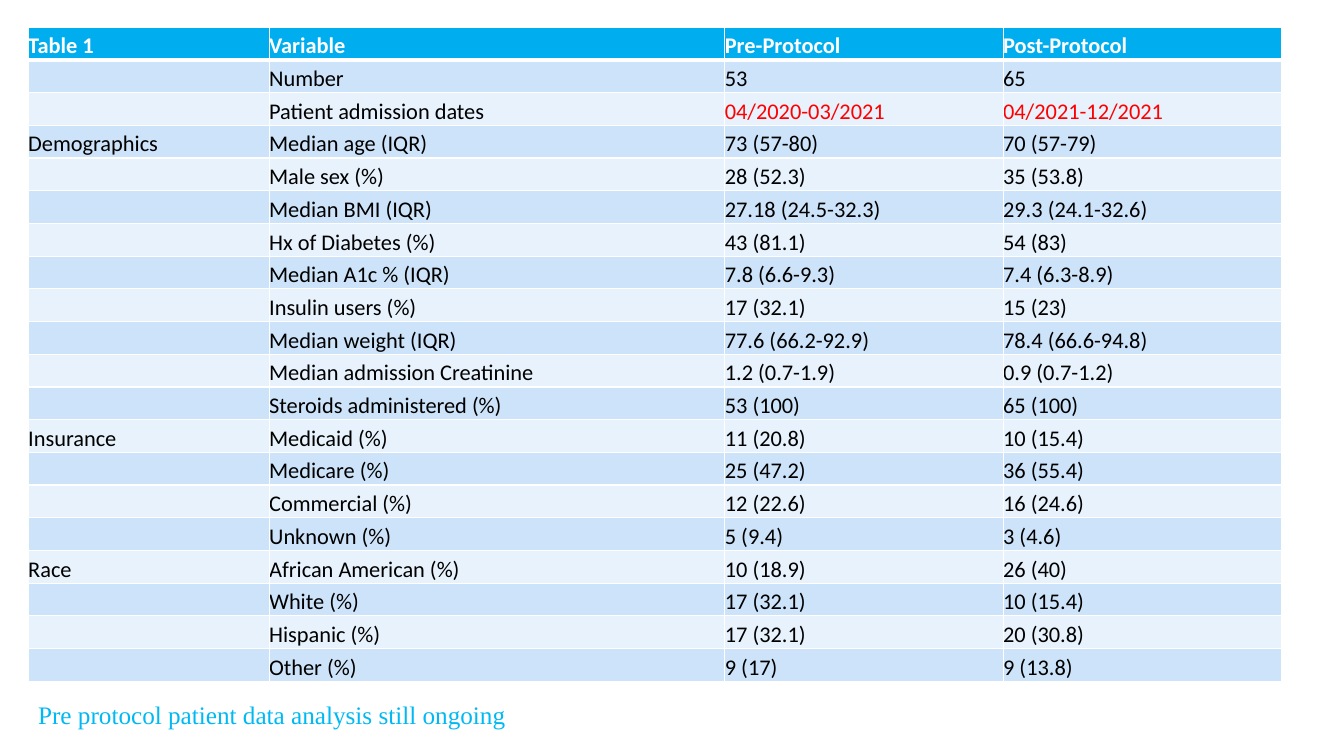
from lxml.etree import SubElement as Sub
from pptx import Presentation
from pptx.dml.color import RGBColor as RGB
from pptx.enum.text import MSO_ANCHOR as Anchor
from pptx.oxml.ns import qn
from pptx.util import Inches, Pt

BLUE = RGB(0x00, 0xAE, 0xEF)
DARK = RGB(0xCC, 0xE3, 0xF9)
PALE = RGB(0xE7, 0xF2, 0xFC)
WHITE = RGB(0xFF, 0xFF, 0xFF)
BLACK = RGB(0x00, 0x00, 0x00)
RED = RGB(0xFF, 0x00, 0x00)
CYAN = RGB(0x00, 0xB9, 0xF2)

WIDTHS = (2.39, 4.52, 2.76, 2.76)
DATES = "Patient admission dates"
ROWS = [
    ("Table 1", "Variable", "Pre-Protocol", "Post-Protocol"),
    ("", "Number", "53", "65"),
    ("", DATES, "04/2020-03/2021", "04/2021-12/2021"),
    ("Demographics", "Median age (IQR)", "73 (57-80)", "70 (57-79)"),
    ("", "Male sex (%)", "28 (52.3)", "35 (53.8)"),
    ("", "Median BMI (IQR)", "27.18 (24.5-32.3)", "29.3 (24.1-32.6)"),
    ("", "Hx of Diabetes (%)", "43 (81.1)", "54 (83)"),
    ("", "Median A1c % (IQR)", "7.8 (6.6-9.3)", "7.4 (6.3-8.9)"),
    ("", "Insulin users (%)", "17 (32.1)", "15 (23)"),
    ("", "Median weight (IQR)", "77.6 (66.2-92.9)", "78.4 (66.6-94.8)"),
    ("", "Median admission Creatinine", "1.2 (0.7-1.9)", "0.9 (0.7-1.2)"),
    ("", "Steroids administered (%)", "53 (100)", "65 (100)"),
    ("Insurance", "Medicaid (%)", "11 (20.8)", "10 (15.4)"),
    ("", "Medicare (%)", "25 (47.2)", "36 (55.4)"),
    ("", "Commercial (%)", "12 (22.6)", "16 (24.6)"),
    ("", "Unknown (%)", "5 (9.4)", "3 (4.6)"),
    ("Race", "African American (%)", "10 (18.9)", "26 (40)"),
    ("", "White (%)", "17 (32.1)", "10 (15.4)"),
    ("", "Hispanic (%)", "17 (32.1)", "20 (30.8)"),
    ("", "Other (%)", "9 (17)", "9 (13.8)"),
]


def style(para, font, size, color, bold=False):
    for run in para.runs:
        run.font.name = font
        run.font.size = Pt(size)
        run.font.bold = bold
        run.font.color.rgb = color


def edge(cell, top, base):
    """Draw white borders; top and base are widths in points."""
    props = cell._tc.get_or_add_tcPr()
    for side, width in (("L", 1), ("R", 1), ("T", top), ("B", base)):
        line = Sub(props, qn(f"a:ln{side}"), w=str(Pt(width)))
        fill = Sub(line, qn("a:solidFill"))
        Sub(fill, qn("a:srgbClr"), val=str(WHITE))


def fill_cell(cell, text, row, color):
    cell.margin_left = cell.margin_right = 0
    cell.margin_top = cell.margin_bottom = 0
    cell.vertical_anchor = Anchor.BOTTOM
    edge(cell, 3 if row == 1 else 1, 3 if row == 0 else 1)
    cell.fill.solid()
    cell.fill.fore_color.rgb = BLUE if row == 0 else DARK if row % 2 else PALE
    cell.text_frame.text = text
    style(cell.text_frame.paragraphs[0], "Calibri", 16, color, row == 0)


def add_grid(slide, left, top, width, height):
    box = [Inches(n) for n in (left, top, width, height)]
    table = slide.shapes.add_table(len(ROWS), len(WIDTHS), *box).table
    for col, size in zip(table.columns, WIDTHS):
        col.width = Inches(size)
    for r, row in enumerate(ROWS):
        table.rows[r].height = Inches(height / len(ROWS))
        for c, text in enumerate(row):
            color = WHITE if r == 0 else BLACK
            if row[1] == DATES and c > 1:
                color = RED
            fill_cell(table.cell(r, c), text, r, color)


def add_note(slide, left, top, width, height):
    box = [Inches(n) for n in (left, top, width, height)]
    frame = slide.shapes.add_textbox(*box).text_frame
    frame.word_wrap = True
    frame.text = "Pre protocol patient data analysis still ongoing"
    style(frame.paragraphs[0], "Times New Roman", 18, CYAN)


def main():
    deck = Presentation()
    deck.slide_width, deck.slide_height = Inches(13.33), Inches(7.5)
    slide = deck.slides.add_slide(deck.slide_layouts[6])
    # Patient table
    add_grid(slide, 0.28, 0.27, 12.43, 6.49)
    # Note under the table
    add_note(slide, 0.28, 6.89, 12.34, 0.4)
    deck.save("out.pptx")


if __name__ == "__main__":
    main()
